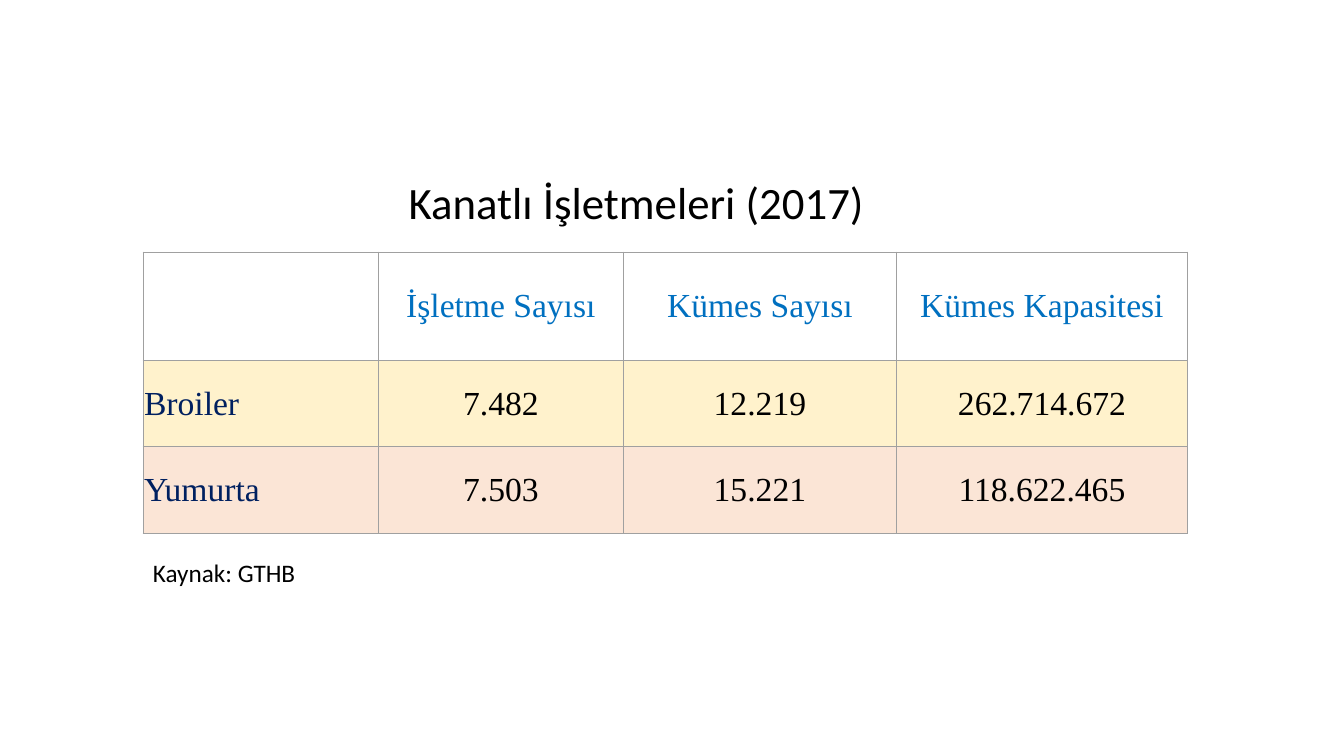
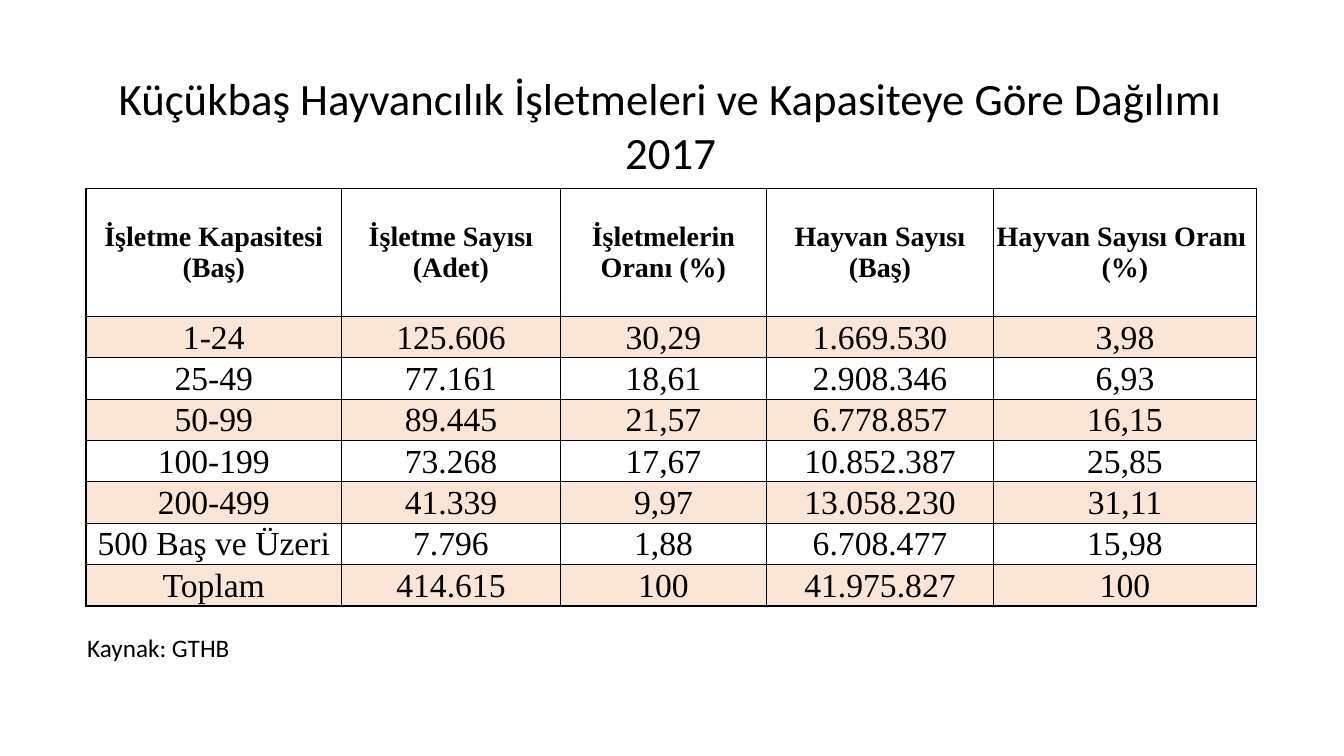
from lxml.etree import SubElement
from pptx import Presentation
from pptx.dml.color import RGBColor
from pptx.enum.text import MSO_ANCHOR, PP_ALIGN
from pptx.oxml.ns import qn
from pptx.util import Pt

BLACK = RGBColor(0x00, 0x00, 0x00)
WHITE = RGBColor(0xFF, 0xFF, 0xFF)
GRAY = RGBColor(0xA0, 0xA0, 0xA0)
BLUE = RGBColor(0x00, 0x70, 0xC0)
NAVY = RGBColor(0x00, 0x20, 0x60)
CREAM = RGBColor(0xFF, 0xF2, 0xCC)
PEACH = RGBColor(0xFB, 0xE5, 0xD6)
TEXT_FONT = "Calibri"
TABLE_FONT = "Times New Roman"
SOURCE_NOTE = "Kaynak: GTHB"


def write_text(text_frame, text, font_name, size, color, alignment, bold=False):
    text_frame.word_wrap = True
    text_frame.text = text
    for paragraph in text_frame.paragraphs:
        paragraph.alignment = alignment
        for run in paragraph.runs:
            run.font.name = font_name
            run.font.size = Pt(size)
            run.font.bold = bold
            run.font.color.rgb = color


def draw_borders(cell, color, width):
    properties = cell._tc.get_or_add_tcPr()
    for side in ("a:lnL", "a:lnR", "a:lnT", "a:lnB"):
        line = SubElement(properties, qn(side), w=str(Pt(width)))
        fill = SubElement(line, qn("a:solidFill"))
        SubElement(fill, qn("a:srgbClr"), val=str(color))


# Content of each slide; boxes are left, top, width, height in points
slides = [
    {
        "title": "Kanatlı İşletmeleri (2017)",
        "title_box": (39.6, 121, 830, 46),
        "note_box": (102.2, 394.6, 181, 51),
        "table_position": (102.2, 180),
        "columns": (168.2, 174.9, 195, 208),
        "header_height": 77.2,
        "row_height": 61.9,
        "header_size": 24,
        "header_color": BLUE,
        "header_bold": False,
        "label_color": NAVY,
        "label_alignment": PP_ALIGN.LEFT,
        "bands": (CREAM, PEACH),
        "border": (GRAY, 0.5),
        "rows": [
            ("", "İşletme Sayısı", "Kümes Sayısı", "Kümes Kapasitesi"),
            ("Broiler", "7.482", "12.219", "262.714.672"),
            ("Yumurta", "7.503", "15.221", "118.622.465"),
        ],
    },
    {
        "title": "Küçükbaş Hayvancılık İşletmeleri ve Kapasiteye Göre Dağılımı\n2017",
        "title_box": (64, 46.8, 830, 85),
        "note_box": (55.2, 447.8, 181, 51),
        "table_position": (61.4, 134.6),
        "columns": (182.6, 156.3, 147.3, 162, 188),
        "header_height": 91.5,
        "row_height": 29.5,
        "header_size": 20,
        "header_color": BLACK,
        "header_bold": True,
        "label_color": BLACK,
        "label_alignment": PP_ALIGN.CENTER,
        "bands": (PEACH, WHITE),
        "border": (BLACK, 1),
        "rows": [
            ("İşletme Kapasitesi (Baş)", "İşletme Sayısı (Adet)", "İşletmelerin Oranı (%)",
             "Hayvan Sayısı (Baş)", "Hayvan Sayısı Oranı \n(%)"),
            ("1-24", "125.606", "30,29", "1.669.530", "3,98"),
            ("25-49", "77.161", "18,61", "2.908.346", "6,93"),
            ("50-99", "89.445", "21,57", "6.778.857", "16,15"),
            ("100-199", "73.268", "17,67", "10.852.387", "25,85"),
            ("200-499", "41.339", "9,97", "13.058.230", "31,11"),
            ("500 Baş ve Üzeri", "7.796", "1,88", "6.708.477", "15,98"),
            ("Toplam", "414.615", "100", "41.975.827", "100"),
        ],
    },
]

presentation = Presentation()
presentation.slide_width = Pt(960)
presentation.slide_height = Pt(540)

for content in slides:
    slide = presentation.slides.add_slide(presentation.slide_layouts[6])

    # Title and source note
    for text, box, size, alignment in (
        (content["title"], content["title_box"], 32, PP_ALIGN.CENTER),
        (SOURCE_NOTE, content["note_box"], 18, PP_ALIGN.LEFT),
    ):
        text_box = slide.shapes.add_textbox(*(Pt(length) for length in box))
        write_text(text_box.text_frame, text, TEXT_FONT, size, BLACK, alignment)

    # Table grid
    rows, columns = content["rows"], content["columns"]
    heights = [content["header_height"]] + [content["row_height"]] * (len(rows) - 1)
    left, top = content["table_position"]
    table = slide.shapes.add_table(
        len(rows), len(columns), Pt(left), Pt(top), Pt(sum(columns)), Pt(sum(heights))
    ).table
    table.first_row = False
    table.horz_banding = False
    for column, width in zip(table.columns, columns):
        column.width = Pt(width)
    for row, height in zip(table.rows, heights):
        row.height = Pt(height)

    # Table cells
    for row_index, values in enumerate(rows):
        for column_index, value in enumerate(values):
            cell = table.cell(row_index, column_index)
            cell.vertical_anchor = MSO_ANCHOR.MIDDLE
            cell.margin_left = cell.margin_right = cell.margin_top = Pt(0.72)
            cell.margin_bottom = Pt(0)
            draw_borders(cell, *content["border"])

            size, color, bold = 24, BLACK, False
            alignment, background = PP_ALIGN.CENTER, content["bands"][(row_index - 1) % 2]
            if row_index == 0:
                size, color = content["header_size"], content["header_color"]
                bold, background = content["header_bold"], WHITE
            elif column_index == 0:
                color, alignment = content["label_color"], content["label_alignment"]
            cell.fill.solid()
            cell.fill.fore_color.rgb = background
            write_text(cell.text_frame, value, TABLE_FONT, size, color, alignment, bold)

presentation.save("out.pptx")
